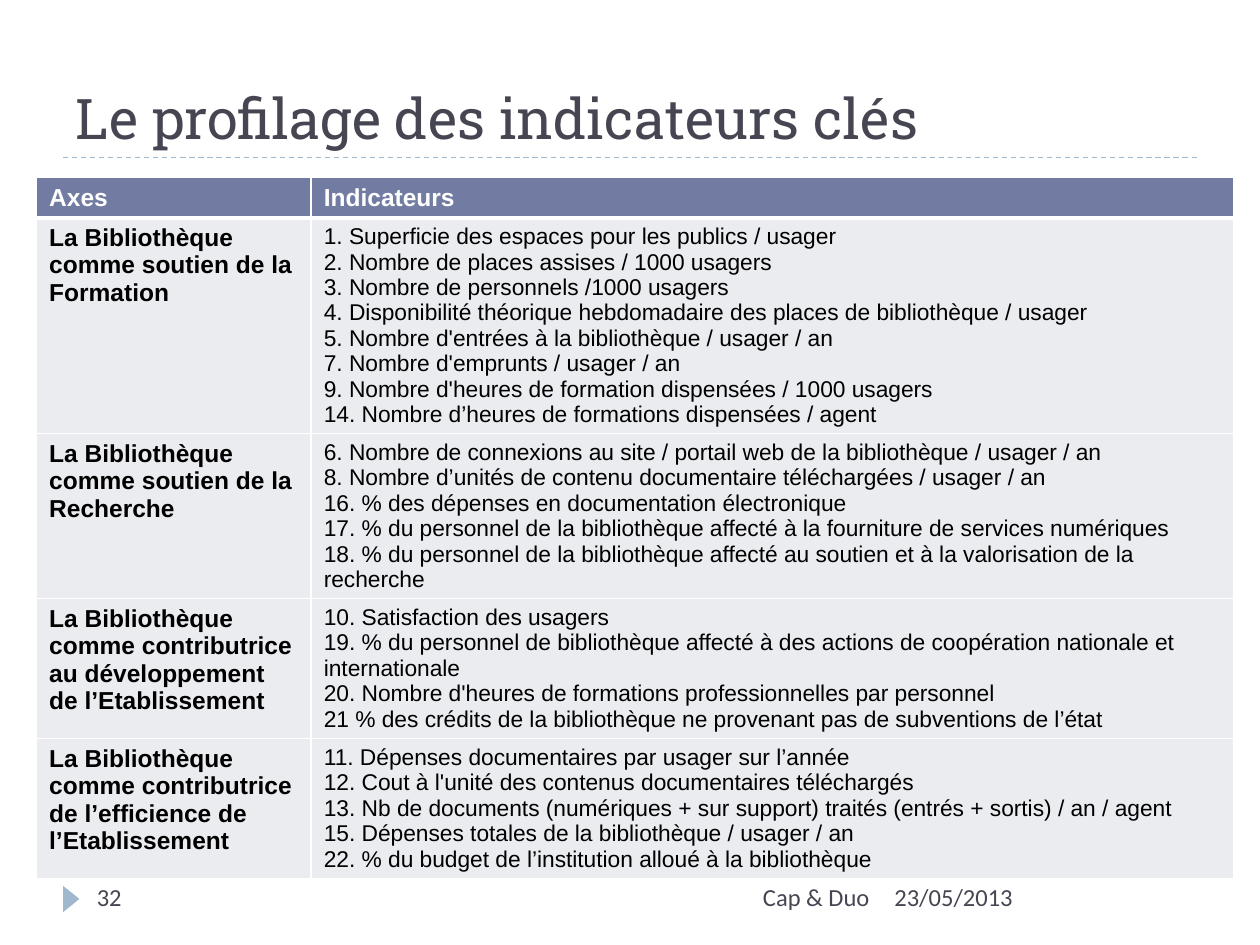
from lxml import etree
from pptx import Presentation
from pptx.dml.color import RGBColor
from pptx.enum.dml import MSO_LINE
from pptx.enum.shapes import MSO_CONNECTOR, MSO_SHAPE
from pptx.enum.text import MSO_ANCHOR, PP_ALIGN
from pptx.oxml.ns import qn
from pptx.util import Inches, Pt

LEFT, RIGHT = PP_ALIGN.LEFT, PP_ALIGN.RIGHT
BOTTOM = MSO_ANCHOR.BOTTOM
DASH = MSO_LINE.DASH
STRAIGHT = MSO_CONNECTOR.STRAIGHT
TRIANGLE = MSO_SHAPE.ISOSCELES_TRIANGLE
COLORS = {
    "accent": "9FB8CD",
    "heading": "464653",
    "header": "727CA3",
    "body": "EBECF0",
    "white": "FFFFFF",
    "black": "000000",
}


def color(name):
    return RGBColor.from_string(COLORS[name])


def write(frame, text, font="Arial", size=14, fill="black", bold=False, align=LEFT):
    frame.word_wrap = True
    for index, line in enumerate(text.split("\n")):
        paragraph = frame.paragraphs[0] if index == 0 else frame.add_paragraph()
        paragraph.alignment = align
        run = paragraph.add_run()
        run.text = line
        run.font.name = font
        run.font.size = Pt(size)
        run.font.bold = bold
        run.font.color.rgb = color(fill)


presentation = Presentation()
presentation.slide_width = Inches(10)
presentation.slide_height = Inches(7.5)
slide = presentation.slides.add_slide(presentation.slide_layouts[5])
shapes = slide.shapes

for y in (6.95, 1.25):
    rule = shapes.add_connector(STRAIGHT, Inches(0.5), Inches(y), Inches(9.5), Inches(y))
    rule.line.color.rgb = color("accent")
    rule.line.width = Pt(0.75)
    rule.line.dash_style = DASH
    etree.SubElement(rule._element.spPr, qn("a:effectLst"))

marker = shapes.add_shape(TRIANGLE, Inches(0.46), Inches(7.07), Inches(0.21), Inches(0.13))
marker.rotation = 90
marker.shadow.inherit = False
marker.fill.solid()
marker.fill.fore_color.rgb = color("accent")
marker.line.fill.background()

title = shapes.title
title.left, title.top = Inches(0.5), Inches(0.17)
title.width, title.height = Inches(9), Inches(1.08)
title.text_frame.vertical_anchor = BOTTOM
write(title.text_frame, "Le profilage des indicateurs clés", font="Roboto Slab", size=32, fill="heading")

rows = [
    ("Axes", "Indicateurs"),
    (
        "La Bibliothèque comme soutien de la Formation",
        "1. Superficie des espaces pour les publics / usager\n"
        "2. Nombre de places assises / 1000 usagers\n"
        "3. Nombre de personnels /1000 usagers\n"
        "4. Disponibilité théorique hebdomadaire des places de bibliothèque / usager\n"
        "5. Nombre d'entrées à la bibliothèque / usager / an\n"
        "7. Nombre d'emprunts / usager / an\n"
        "9. Nombre d'heures de formation dispensées / 1000 usagers\n"
        "14. Nombre d’heures de formations dispensées / agent",
    ),
    (
        "La Bibliothèque comme soutien de la Recherche",
        "6. Nombre de connexions au site / portail web de la bibliothèque / usager / an\n"
        "8. Nombre d’unités de contenu documentaire téléchargées / usager / an\n"
        "16. % des dépenses en documentation électronique\n"
        "17. % du personnel de la bibliothèque affecté à la fourniture de services numériques\n"
        "18. % du personnel de la bibliothèque affecté au soutien et à la valorisation de la recherche",
    ),
    (
        "La Bibliothèque comme contributrice au développement de l’Etablissement",
        "10. Satisfaction des usagers\n"
        "19. % du personnel de bibliothèque affecté à des actions de coopération nationale et internationale\n"
        "20. Nombre d'heures de formations professionnelles par personnel\n"
        "21 % des crédits de la bibliothèque ne provenant pas de subventions de l’état",
    ),
    (
        "La Bibliothèque comme contributrice de l’efficience de l’Etablissement",
        "11. Dépenses documentaires par usager sur l’année\n"
        "12. Cout à l'unité des contenus documentaires téléchargés\n"
        "13. Nb de documents (numériques + sur support) traités (entrés + sortis) / an / agent\n"
        "15. Dépenses totales de la bibliothèque / usager / an\n"
        "22. % du budget de l’institution alloué à la bibliothèque",
    ),
]
row_heights = [0.3, 1.71, 1.31, 1.11, 1.11]
table = shapes.add_table(
    len(rows), 2, Inches(0.29), Inches(1.41), Inches(9.5), Inches(sum(row_heights))
).table
for column, width in zip(table.columns, (2.18, 7.32)):
    column.width = Inches(width)

for row_index, (texts, height) in enumerate(zip(rows, row_heights)):
    table.rows[row_index].height = Inches(height)
    is_header = row_index == 0
    for column_index, text in enumerate(texts):
        cell = table.cell(row_index, column_index)
        is_label = is_header or column_index == 0
        write(
            cell.text_frame,
            text,
            size=14 if is_label else 13,
            bold=is_label,
            fill="white" if is_header else "black",
        )
        properties = cell._tc.get_or_add_tcPr()
        for side in "LRTB":
            is_thick = (row_index, side) in ((0, "B"), (1, "T"))
            border = etree.SubElement(properties, qn(f"a:ln{side}"), w=str(Pt(3 if is_thick else 1)))
            border_fill = etree.SubElement(border, qn("a:solidFill"))
            etree.SubElement(border_fill, qn("a:srgbClr"), val=COLORS["white"])
        cell.fill.solid()
        cell.fill.fore_color.rgb = color("header" if is_header else "body")

footers = [
    ("23/05/2013", 7, 2.5, LEFT),
    ("Cap & Duo", 3.17, 3.83, RIGHT),
    ("32", 0.67, 2.17, LEFT),
]
for text, left, width, align in footers:
    footer = shapes.add_textbox(Inches(left), Inches(6.95), Inches(width), Inches(0.4))
    write(footer.text_frame, text, font="Calibri", fill="heading", align=align)

presentation.save("out.pptx")
